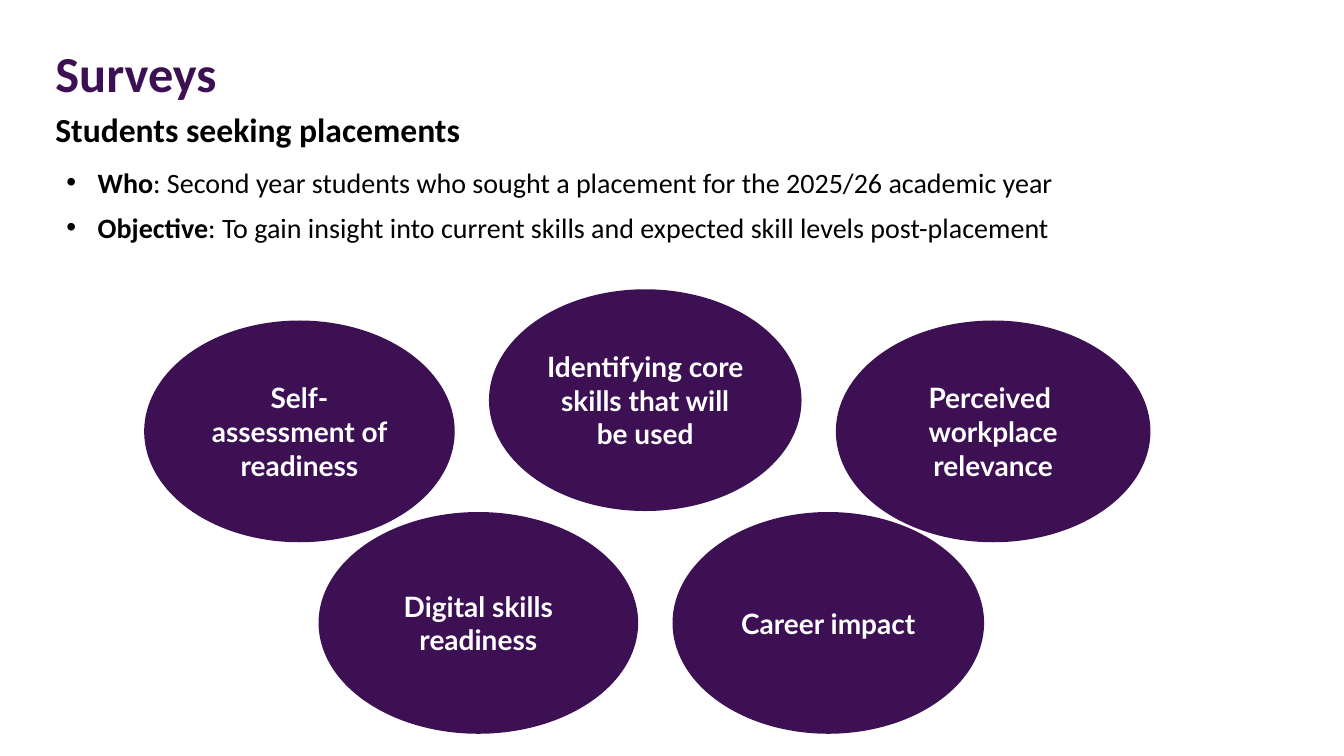
from lxml import etree
from pptx import Presentation
from pptx.dml.color import RGBColor
from pptx.enum.shapes import MSO_SHAPE
from pptx.enum.text import MSO_ANCHOR, PP_ALIGN
from pptx.oxml.ns import qn
from pptx.util import Inches, Pt

OVAL = MSO_SHAPE.OVAL
TOP, MIDDLE, BOTTOM = MSO_ANCHOR.TOP, MSO_ANCHOR.MIDDLE, MSO_ANCHOR.BOTTOM
LEFT, CENTER = PP_ALIGN.LEFT, PP_ALIGN.CENTER

WIDE, HIGH = 13.33, 7.5
EDGE = 0.45
GAP = 0.34
TALL = 2.2
INDENT = 0.31
COLORS = {"plum": "3C1053", "ink": "000000", "white": "FFFFFF"}

POINTS = [
    ("Who", ": Second year students who sought a placement for the 2025/26 academic year"),
    ("Objective", ": To gain insight into current skills and expected skill levels post-placement"),
]
ROWS = [
    (1.43, [
        ("Self-assessment of readiness", 3.08, 3.18),
        ("Identifying core skills that will be used", 3.1, 2.87),
        ("Perceived  workplace relevance", 3.12, 3.18),
    ]),
    (3.16, [
        ("Digital skills readiness", 3.17, 5.08),
        ("Career impact", 3.09, 5.08),
    ]),
]


def color(name):
    return RGBColor.from_string(COLORS[name])


def style(para, size, tint, face="Calibri", bold=None, align=LEFT):
    para.alignment = align
    font = para.font
    font.name, font.size, font.bold = face, Pt(size), bold
    font.color.rgb = color(tint)


def place(shape, left, top, width, height):
    shape.left, shape.top = Inches(left), Inches(top)
    shape.width, shape.height = Inches(width), Inches(height)


def add_box(slide, left, top, width, height):
    box = slide.shapes.add_textbox(*map(Inches, (left, top, width, height)))
    box.text_frame.word_wrap = True
    box.text_frame.vertical_anchor = TOP
    return box.text_frame


def add_title(slide, text):
    title = slide.shapes.title
    place(title, EDGE, 0.52, 8.58, 0.56)
    frame = title.text_frame
    frame.text = text
    frame.vertical_anchor = BOTTOM
    para = frame.paragraphs[0]
    para.line_spacing = 0.9
    style(para, 36, "plum", bold=True)


def add_head(slide, text):
    frame = add_box(slide, EDGE, 1.03, 8.57, 0.56)
    frame.text = text
    style(frame.paragraphs[0], 24, "ink", bold=True)


def add_list(slide, points):
    frame = add_box(slide, 0.56, 1.59, 11.69, 0.89)
    for spot, (label, text) in enumerate(points):
        para = frame.add_paragraph() if spot else frame.paragraphs[0]
        props = para._p.get_or_add_pPr()
        props.set("marL", str(Inches(INDENT)))
        props.set("indent", str(-Inches(INDENT)))
        para.space_after = Pt(8)
        etree.SubElement(props, qn("a:buFont")).set("typeface", "Arial")
        etree.SubElement(props, qn("a:buChar")).set("char", "•")
        style(para, 20, "ink")
        for part, bold in ((label, True), (text, False)):
            run = para.add_run()
            run.text = part
            run.font.bold = bold


def add_oval(slide, text, left, top, width):
    oval = slide.shapes.add_shape(OVAL, *map(Inches, (left, top, width, TALL)))
    oval.shadow.inherit = False
    oval.fill.solid()
    oval.fill.fore_color.rgb = color("plum")
    oval.line.fill.background()
    frame = oval.text_frame
    frame.word_wrap = True
    frame.vertical_anchor = MIDDLE
    frame.text = text
    style(frame.paragraphs[0], 20, "white", "Lato", True, CENTER)


def add_row(slide, left, themes):
    for text, width, top in themes:
        add_oval(slide, text, left, top, width)
        left += width + GAP


def main():
    deck = Presentation()
    deck.slide_width, deck.slide_height = Inches(WIDE), Inches(HIGH)
    slide = deck.slides.add_slide(deck.slide_layouts[5])
    add_title(slide, "Surveys")
    add_head(slide, "Students seeking placements")
    add_list(slide, POINTS)
    for left, themes in ROWS:
        add_row(slide, left, themes)
    deck.save("out.pptx")


if __name__ == "__main__":
    main()
